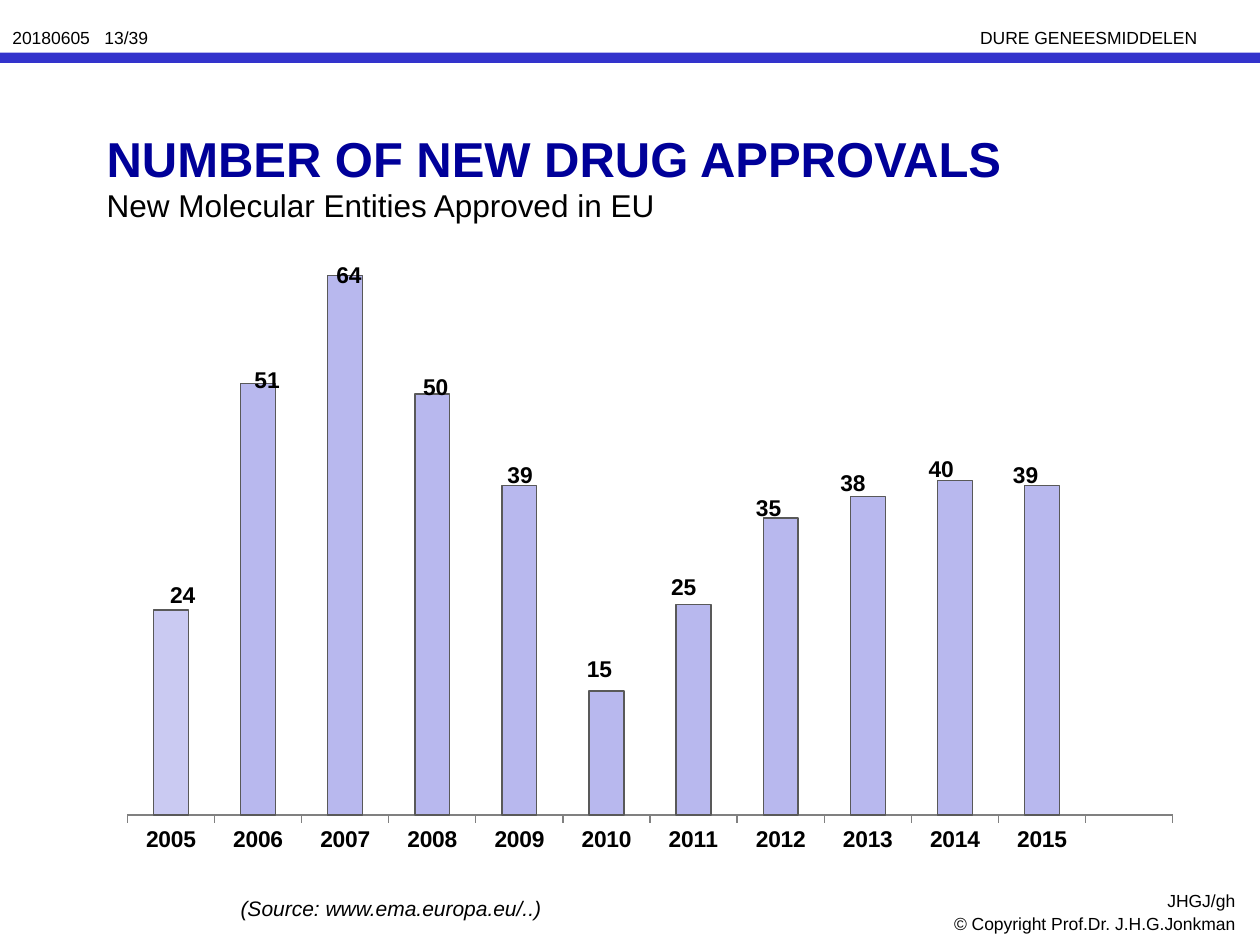
from lxml import etree
from pptx import Presentation
from pptx.chart.data import CategoryChartData
from pptx.dml.color import RGBColor
from pptx.enum.chart import XL_CHART_TYPE as ChartType, XL_TICK_MARK as Tick
from pptx.enum.shapes import MSO_SHAPE as Shape
from pptx.enum.text import MSO_ANCHOR as Anchor, PP_ALIGN as Align
from pptx.oxml.ns import qn
from pptx.util import Cm, Pt

FONT = "Arial"
BLACK = RGBColor(0, 0, 0)
NAVY = RGBColor(0x00, 0x00, 0x99)
BLUE = RGBColor(0x33, 0x33, 0xCC)
LILAC = RGBColor(0xB8, 0xB8, 0xEE)
PALE_LILAC = RGBColor(0xCA, 0xCA, 0xF2)
OUTLINE = RGBColor(0x59, 0x59, 0x59)
AXIS_GREY = RGBColor(0x80, 0x80, 0x80)

FIRST_YEAR = 2005
# approvals, then left and top of the label within the chart box (cm)
APPROVALS = [
    (24, 1.05, 7.31), (51, 2.75, 2.97), (64, 4.4, 0.86), (50, 6.15, 3.12),
    (39, 7.85, 4.9), (15, 9.45, 8.81), (25, 11.15, 7.16), (35, 12.86, 5.56),
    (38, 14.56, 5.05), (40, 16.34, 4.77), (39, 18.04, 4.9),
]


def add_text(slide, box, text, size, color=BLACK, bold=False, italic=False,
             align=Align.LEFT, anchor=Anchor.TOP, wrap=True):
    """Put one line of text in box (left, top, width, height in cm)."""
    frame = slide.shapes.add_textbox(*map(Cm, box)).text_frame
    frame.word_wrap = wrap
    frame.vertical_anchor = anchor
    line = frame.paragraphs[0]
    line.text = text
    line.alignment = align
    font = line.font
    font.name, font.size, font.bold, font.italic = FONT, Pt(size), bold, italic
    font.color.rgb = color


def add_header(slide, left, top, width):
    add_text(slide, (left, top, 3.53, 0.68), "20180605   13/39", 10, wrap=False)
    add_text(slide, (left + 19.51, top, 4.95, 0.68), "DURE GENEESMIDDELEN", 10,
             wrap=False)
    rule = slide.shapes.add_shape(
        Shape.RECTANGLE, Cm(left), Cm(top + 0.65), Cm(width), Cm(0.21))
    rule.shadow.inherit = False
    rule.fill.solid()
    rule.fill.fore_color.rgb = BLUE
    rule.line.fill.background()


def add_heading(slide, left, top):
    add_text(slide, (left, top, 23.5, 3.18), "NUMBER OF NEW DRUG APPROVALS", 28,
             NAVY, bold=True, anchor=Anchor.MIDDLE)
    add_text(slide, (left, top + 2.02, 13.54, 1),
             "New Molecular Entities Approved in EU", 18)


def set_plot_area(chart, **fractions):
    """Fix the inner plot area, as fractions (x, y, w, h) of the chart."""
    plot_area = chart._chartSpace.chart.plotArea
    for old in plot_area.findall(qn("c:layout")):
        plot_area.remove(old)
    layout = etree.Element(qn("c:layout"))
    plot_area.insert(0, layout)
    manual = etree.SubElement(layout, qn("c:manualLayout"))
    settings = {"layoutTarget": "inner", "xMode": "edge", "yMode": "edge", **fractions}
    for name, value in settings.items():
        etree.SubElement(manual, qn(f"c:{name}")).set("val", str(value))


def add_approvals_chart(slide, left, top, width, height):
    """Columns show each year as a percentage of the best year."""
    peak = max(count for count, _, _ in APPROVALS)
    data = CategoryChartData()
    data.categories = [str(FIRST_YEAR + i) for i in range(len(APPROVALS))] + [""]
    data.add_series(
        "Series 1", [round(100 * count / peak) for count, _, _ in APPROVALS] + [None])
    chart = slide.shapes.add_chart(
        ChartType.COLUMN_CLUSTERED, Cm(left), Cm(top), Cm(width), Cm(height), data).chart
    chart.has_legend = chart.has_title = False
    chart.font.name, chart.font.size = FONT, Pt(18)
    chart.font.color.rgb = BLACK
    set_plot_area(chart, x=0.02, y=0.097, w=0.96, h=0.826)

    values = chart.value_axis
    values.minimum_scale, values.maximum_scale = 0, 100
    values.has_major_gridlines = False
    values.visible = False

    years = chart.category_axis
    years.major_tick_mark = Tick.OUTSIDE
    years.format.line.color.rgb = AXIS_GREY
    years.format.line.width = Pt(0.75)
    year_font = years.tick_labels.font
    year_font.name, year_font.size, year_font.bold = FONT, Pt(13), True
    year_font.color.rgb = BLACK

    plot = chart.plots[0]
    plot.gap_width = 150
    plot.vary_by_categories = False
    columns = plot.series[0]
    for part, color in ((columns, LILAC), (columns.points[0], PALE_LILAC)):
        part.format.fill.solid()
        part.format.fill.fore_color.rgb = color
        part.format.line.color.rgb = OUTLINE
        part.format.line.width = Pt(0.75)

    for count, dx, dy in APPROVALS:
        add_text(slide, (left + dx, top + dy, 1.19, 0.81), str(count), 13, bold=True)


def add_footer(slide, left, top, width):
    add_text(slide, (left, top + 0.12, 8.69, 0.76),
             "(Source: www.ema.europa.eu/..)", 12, italic=True)
    credits = [("JHGJ/gh", 0, 2.74), ("© Copyright Prof.Dr. J.H.G.Jonkman", 0.48, 6.65)]
    for text, dy, text_width in credits:
        add_text(slide, (left + width - text_width, top + dy, text_width, 0.69),
                 text, 10, align=Align.RIGHT)


def main():
    deck = Presentation()
    deck.slide_width, deck.slide_height = Cm(25.4), Cm(19.05)
    slide = deck.slides.add_slide(deck.slide_layouts[6])
    add_header(slide, 0, 0.41, 25.4)
    add_heading(slide, 1.9, 1.6)
    add_approvals_chart(slide, 2.13, 4.27, 21.95, 13.18)
    add_footer(slide, 4.6, 17.81, 20.55)
    deck.save("out.pptx")


if __name__ == "__main__":
    main()
